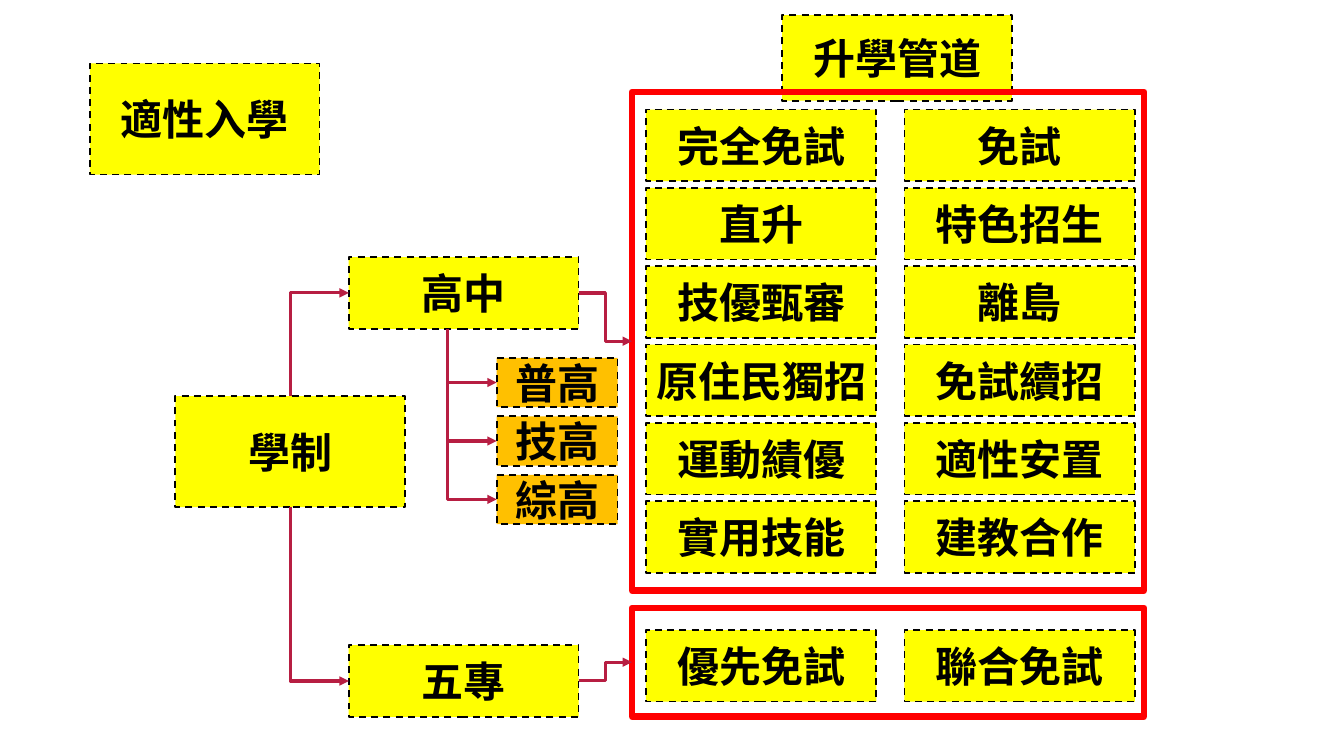
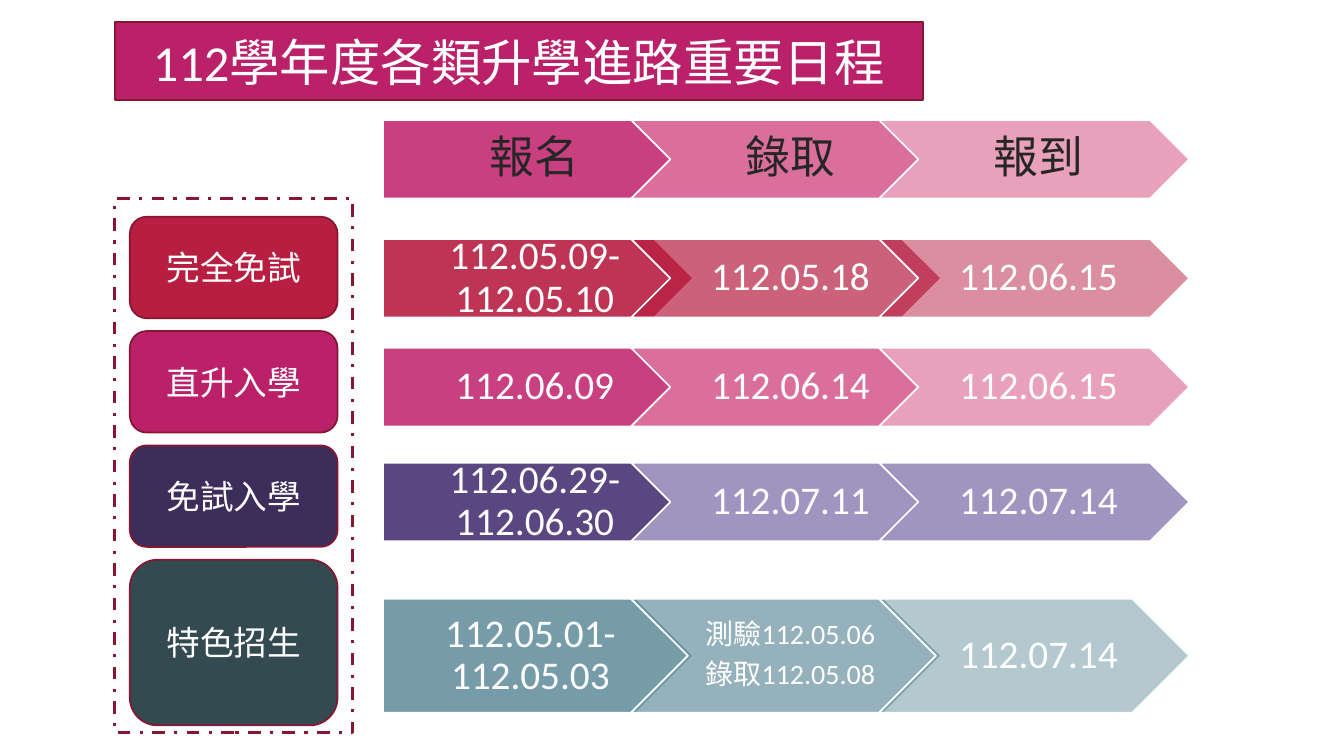
from dataclasses import dataclass

from lxml.etree import SubElement
from pptx import Presentation
from pptx.dml.color import RGBColor
from pptx.enum.dml import MSO_LINE
from pptx.enum.shapes import MSO_CONNECTOR, MSO_SHAPE
from pptx.enum.text import MSO_ANCHOR, MSO_AUTO_SIZE, PP_ALIGN
from pptx.oxml.ns import qn
from pptx.util import Inches, Pt

LATIN, HAN = "Calibri", "Noto Sans CJK SC"
BLACK, WHITE, INK = "000000", "FFFFFF", "262626"
YELLOW, ORANGE, RED = "FFFF00", "FFC000", "FF0000"
CRIMSON, MAGENTA, WINE = "B71E42", "BA2169", "871631"
PURPLE, SLATE, TEAL = "3C2D5A", "334A51", "6892A0"
PINKS = [("C94081", 100), ("DA6F9C", 100), ("E9A0BB", 100)]
VIOLETS = [("5A4681", 100), ("A094C0", 100), ("A094C0", 100)]
FADE = (90, 70, 50)

DASHED = {"color": BLACK, "width": 1.25, "dash": MSO_LINE.DASH}
FRAMED = {"color": RED, "width": 4.5}
OUTLINED = {"color": WINE, "width": 1.25}
DASH_DOT = {"color": WINE, "width": 2.25, "dash": MSO_LINE.DASH_DOT}
WHITE_EDGE = {"color": WHITE, "width": 1.25}
NODE_FONT = {"size": Pt(30), "bold": True}
NODE_INSETS = {"margin_left": 0, "margin_right": 0}
TOP, LEFT, BOTTOM, RIGHT = range(4)


@dataclass
class Box:
    x: float
    y: float
    w: float
    h: float

    def share(self, x, y, w, h):
        return Box(self.x + self.w * x / 100, self.y + self.h * y / 100,
                   self.w * w / 100, self.h * h / 100)

    def emu(self):
        return [round(v) for v in (self.x, self.y, self.w, self.h)]


PAGE = Box(0, 0, Inches(13.33), Inches(7.5))


def assign(target, values):
    for name, value in values.items():
        setattr(target, name, value)


def paint(fill, color):
    fill.solid()
    fill.fore_color.rgb = RGBColor.from_string(color)


def stroke(line, color, width, dash=None):
    paint(line.fill, color)
    line.width = Pt(width)
    if dash:
        line.dash_style = dash


def write(shape, lines, color, font, insets=None, spacing=None):
    frame = shape.text_frame
    assign(frame, {"word_wrap": True, "auto_size": MSO_AUTO_SIZE.NONE,
                   "vertical_anchor": MSO_ANCHOR.MIDDLE, **(insets or {})})
    frame.text = "\n".join(lines)
    for paragraph in frame.paragraphs:
        assign(paragraph, {"alignment": PP_ALIGN.CENTER, **(spacing or {})})
        for run in paragraph.runs:
            assign(run.font, {"name": LATIN, "bold": False, **font})
            paint(run.font.fill, color)
            SubElement(run._r.get_or_add_rPr(), qn("a:ea")).set("typeface", HAN)


def draw(slide, kind, box, line, color=None, opacity=100):
    shape = slide.shapes.add_shape(kind, *box.emu())
    shape.shadow.inherit = False
    if color:
        paint(shape.fill, color)
    else:
        shape.fill.background()
    if opacity < 100:
        tint = shape._element.spPr.find(qn("a:solidFill")).find(qn("a:srgbClr"))
        SubElement(tint, qn("a:alpha")).set("val", str(opacity * 1000))
    stroke(shape.line, **line)
    return shape


def node(slide, box, label, color=YELLOW):
    shape = draw(slide, MSO_SHAPE.RECTANGLE, box, DASHED, color)
    write(shape, [label], BLACK, NODE_FONT, NODE_INSETS)
    return shape


def titled_slide(deck, box, label, geometry, color, line, ink, font):
    slide = deck.slides.add_slide(deck.slide_layouts[5])
    title = slide.shapes.title
    assign(title, dict(zip(("left", "top", "width", "height"), box.emu())))
    outline = SubElement(title._element.spPr, qn("a:prstGeom"))
    outline.set("prst", geometry)
    SubElement(outline, qn("a:avLst"))
    paint(title.fill, color)
    stroke(title.line, **line)
    write(title, [label], ink, font)
    return slide


def arrow(slide, start, end):
    link = slide.shapes.add_connector(MSO_CONNECTOR.ELBOW, *start, *end)
    stroke(link.line, CRIMSON, 2.25)
    shape_props = link._element.spPr
    SubElement(shape_props.find(qn("a:ln")), qn("a:tailEnd")).set("type", "triangle")
    SubElement(shape_props, qn("a:effectLst"))
    return link


def site(shape, side):
    across = {LEFT: 0, RIGHT: 2}.get(side, 1)
    down = {TOP: 0, BOTTOM: 2}.get(side, 1)
    return shape.left + shape.width * across // 2, shape.top + shape.height * down // 2


def side_arrow(slide, source, target):
    link = arrow(slide, site(source, RIGHT), site(target, LEFT))
    link.begin_connect(source, RIGHT)
    link.end_connect(target, LEFT)


def corner_arrow(slide, start, target):
    end = site(target, LEFT)
    link = arrow(slide, start, end)
    run, rise = end[0] - start[0], abs(end[1] - start[1])
    upward = end[1] < start[1]
    assign(link, {"left": (start[0] + end[0] - rise) // 2,
                  "top": (start[1] + end[1] - run) // 2,
                  "width": rise, "height": run})
    shape_props = link._element.spPr
    shape_props.find(qn("a:prstGeom")).set("prst", "bentConnector2")
    turn = {"rot": "5400000" if upward else "16200000",
            "flipH": "1", "flipV": "1" if upward else "0"}
    for name, value in turn.items():
        shape_props.find(qn("a:xfrm")).set(name, value)


def channels(slide, box, rows, top, height, pitch):
    for r, row in enumerate(rows):
        for c, label in enumerate(row):
            node(slide, box.share(2.7 + 50.5 * c, top + pitch * r, 45, height), label)
    return draw(slide, MSO_SHAPE.RECTANGLE, box, FRAMED)


def school_types(slide, box, senior, labels):
    trunk = senior.left + round(senior.width * 0.43), senior.top + senior.height
    for r, label in enumerate(labels):
        kind = node(slide, box.share(0, 35.15 * r, 100, 29.7), label, ORANGE)
        corner_arrow(slide, trunk, kind)


def pathways_slide(deck):
    slide = titled_slide(deck, PAGE.share(6.68, 8.4, 17.1, 14.7), "適性入學",
                         "rect", YELLOW, DASHED, BLACK, NODE_FONT)
    system = node(slide, PAGE.share(13.05, 52.4, 17.1, 14.7), "學制")
    node(slide, PAGE.share(58.2, 2, 17.1, 11.33), "升學管道")
    senior = node(slide, PAGE.share(25.95, 34, 17.1, 9.5), "高中")
    college = node(slide, PAGE.share(25.95, 85.33, 17.1, 9.5), "五專")
    senior_routes = channels(slide, PAGE.share(47.03, 12.13, 38.1, 66), [
        ("完全免試", "免試"), ("直升", "特色招生"), ("技優甄審", "離島"),
        ("原住民獨招", "免試續招"), ("運動績優", "適性安置"),
        ("實用技能", "建教合作")], 3.6, 14.35, 15.7)
    college_routes = channels(slide, PAGE.share(47.03, 80.4, 38.1, 14.4),
                              [("優先免試", "聯合免試")], 20.5, 65.7, 0)
    side_arrow(slide, senior, senior_routes)
    side_arrow(slide, college, college_routes)
    corner_arrow(slide, site(system, BOTTOM), college)
    corner_arrow(slide, site(system, TOP), senior)
    school_types(slide, PAGE.share(36.95, 47.33, 9, 22), senior, ["普高", "技高", "綜高"])


def admission_types(slide, box, entries):
    for r, (label, color) in enumerate(entries):
        height = 31 if r == len(entries) - 1 else 19
        shape = draw(slide, MSO_SHAPE.ROUNDED_RECTANGLE,
                     box.share(6.3, 3.4 + 21.4 * r, 87.3, height), OUTLINED, color)
        write(shape, [label], WHITE, {"size": Pt(24)})
    draw(slide, MSO_SHAPE.RECTANGLE, box, DASH_DOT)


def stage_row(slide, box, stages, colors, ink=WHITE, size=28):
    for c, (lines, (color, opacity)) in enumerate(zip(stages, colors)):
        kind = MSO_SHAPE.CHEVRON if c else MSO_SHAPE.PENTAGON
        shape = draw(slide, kind, box.share(30.75 * c, 0, 38.5, 100),
                     WHITE_EDGE, color, opacity)
        left, right = (8, 2) if c else (12, 3)
        insets = {"margin_left": Pt(left), "margin_right": Pt(right)}
        points, gap = (20, 7) if len(lines) > 1 else (size, 0)
        write(shape, lines, ink, {"size": Pt(points)}, insets,
              {"line_spacing": 0.9, "space_after": Pt(gap)})


def faded(color):
    return [(color, opacity) for opacity in FADE]


def schedule_slide(deck):
    slide = titled_slide(deck, PAGE.share(8.55, 2.93, 60.1, 10.27),
                         "112學年度各類升學進路重要日程", "roundRect",
                         MAGENTA, OUTLINED, WHITE, {"size": Pt(36)})
    admission_types(slide, PAGE.share(8.55, 26.27, 17.7, 70.67), [
        ("完全免試", CRIMSON), ("直升入學", MAGENTA),
        ("免試入學", PURPLE), ("特色招生", SLATE)])
    stage_row(slide, PAGE.share(28.5, 15.87, 60, 10.4),
              [["報名"], ["錄取"], ["報到"]], PINKS, INK, 32)
    rows = [
        (31.6, 10.4, faded(CRIMSON),
         [["112.05.09-112.05.10"], ["112.05.18"], ["112.06.15"]]),
        (46, 10.4, PINKS, [["112.06.09"], ["112.06.14"], ["112.06.15"]]),
        (61.2, 10.4, VIOLETS,
         [["112.06.29-112.06.30"], ["112.07.11"], ["112.07.14"]]),
        (79.2, 15.07, faded(TEAL),
         [["112.05.01-112.05.03"], ["測驗112.05.06", "錄取112.05.08"], ["112.07.14"]]),
    ]
    for top, height, colors, stages in rows:
        stage_row(slide, PAGE.share(28.5, top, 60, height), stages, colors)


def main():
    deck = Presentation()
    assign(deck, {"slide_width": PAGE.w, "slide_height": PAGE.h})
    pathways_slide(deck)
    schedule_slide(deck)
    deck.save("out.pptx")


if __name__ == "__main__":
    main()
